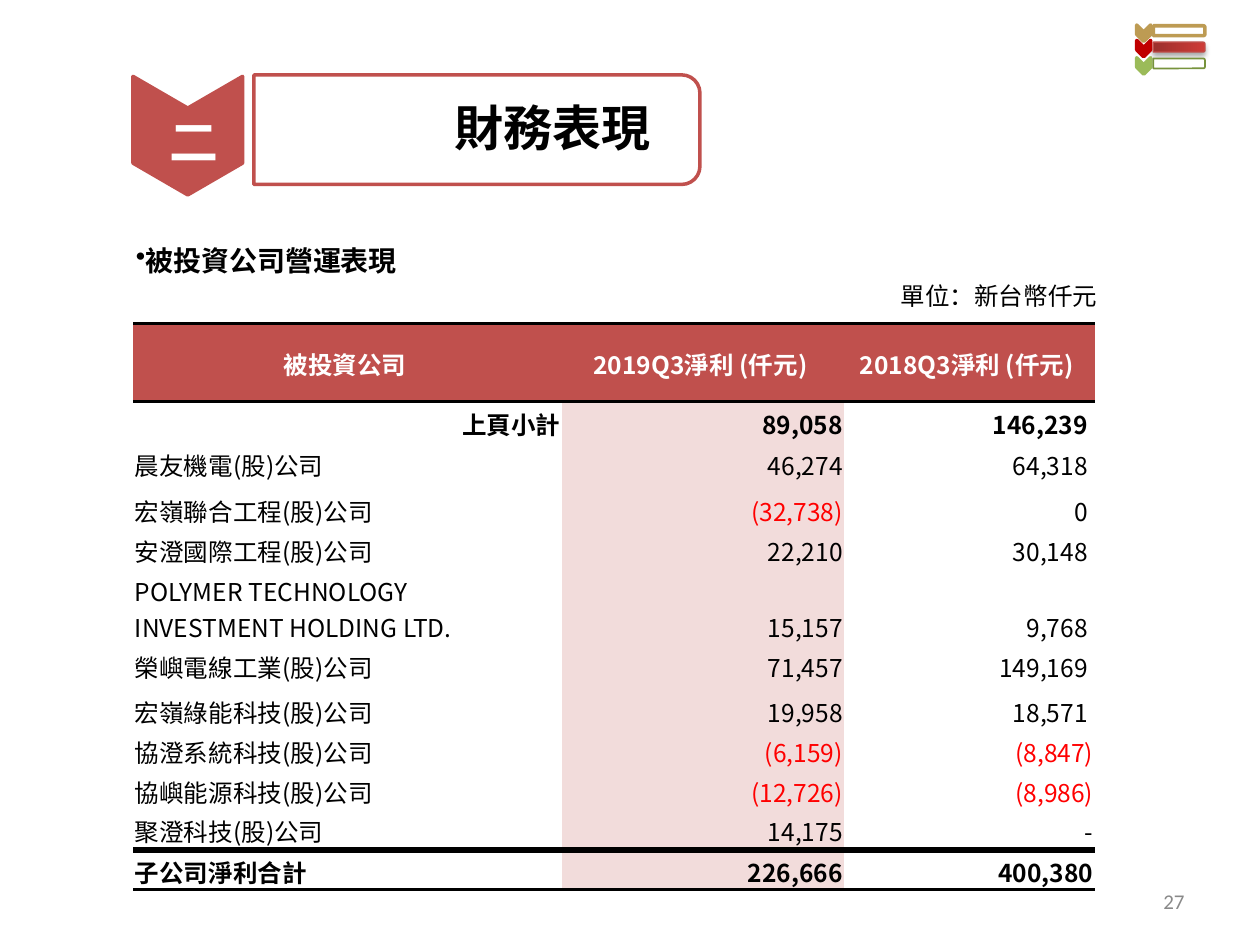
"""Build the slide on the results of the invested companies."""
from lxml import etree
from pptx import Presentation
from pptx.dml.color import RGBColor
from pptx.enum.shapes import MSO_SHAPE
from pptx.enum.text import MSO_ANCHOR, PP_ALIGN
from pptx.oxml import parse_xml
from pptx.oxml.ns import qn
from pptx.util import Cm, Pt

CHEVRON, TAB = MSO_SHAPE.CHEVRON, MSO_SHAPE.ROUND_2_SAME_RECTANGLE
TOP, MIDDLE, BOTTOM = MSO_ANCHOR.TOP, MSO_ANCHOR.MIDDLE, MSO_ANCHOR.BOTTOM
LEFT, CENTER, RIGHT = PP_ALIGN.LEFT, PP_ALIGN.CENTER, PP_ALIGN.RIGHT
CJK = "Noto Sans CJK SC"
RED, BLACK, WHITE = "C0504D", "000000", "FFFFFF"
NAMESPACE = 'xmlns:a="http://schemas.openxmlformats.org/drawingml/2006/main"'
NO_STYLE = "{2D5ABB26-0587-4C30-8999-92F81FD0307C}"


def rgb(color):
    """Turn a hex string into a colour."""
    return RGBColor.from_string(color)


def style_text(para, size, color, bold=False, align=LEFT, name=CJK):
    """Format a paragraph and its runs."""
    para.alignment = align
    for span in para.runs:
        span.font.size = Pt(size)
        span.font.bold = bold
        span.font.name = name
        span.font.color.rgb = rgb(color)
        east_asian = etree.SubElement(span.font._element, qn("a:ea"))
        east_asian.set("typeface", name)


deck = Presentation()
deck.slide_width, deck.slide_height = Cm(25.4), Cm(19.05)
page = deck.slides.add_slide(deck.slide_layouts[6])

shapes = [
    (TAB, 8.51, -1.88, 2.21, 8.99, WHITE, RED, 2),
    (CHEVRON, 2.59, 1.63, 2.39, 2.21, RED, RED, 2),
    (TAB, 23.67, 0.43, 0.2, 1.04, "gradient", "BF4C48", 0.75),
    (CHEVRON, 22.89, 0.53, 0.33, 0.28, "BD9B53", "BD9B53", 2),
    (TAB, 23.67, 0.1, 0.2, 1.04, None, "BD9B53", 2),
    (CHEVRON, 22.89, 1.19, 0.33, 0.28, "9BBB59", "9BBB59", 2),
    (CHEVRON, 22.89, 0.84, 0.33, 0.28, "C00000", "C00000", 2),
    (TAB, 23.67, 0.76, 0.2, 1.04, WHITE, "77933C", 1),
]
for kind, left, top, width, height, fill, line, weight in shapes:
    shape = page.shapes.add_shape(kind, Cm(left), Cm(top), Cm(width), Cm(height))
    shape.rotation = 90
    shape.shadow.inherit = False
    shape.line.color.rgb = rgb(line)
    shape.line.width = Pt(weight)
    if kind == CHEVRON and width > 1:
        shape.adjustments[0] = 0.29
    if fill is None:
        shape.fill.background()
    elif fill == "gradient":
        shape.fill.gradient()
        shape.fill.gradient_angle = 90
        for stop, color in zip(shape.fill.gradient_stops, ("9C2F2D", "CE3B37")):
            stop.color.rgb = rgb(color)
        effects = shape._element.spPr.find(qn("a:effectLst"))
        effects.append(parse_xml(
            f'<a:outerShdw {NAMESPACE} blurRad="{Pt(3.1)}" dist="{Pt(1.8)}" dir="5400000" '
            'rotWithShape="0"><a:srgbClr val="000000"><a:alpha val="35000"/></a:srgbClr>'
            '</a:outerShdw>'))
    else:
        shape.fill.solid()
        shape.fill.fore_color.rgb = rgb(fill)
        if fill == WHITE:
            color = shape._element.spPr.find(qn("a:solidFill"))[0]
            etree.SubElement(color, qn("a:alpha")).set("val", "90000")

texts = [
    ("被投資公司營運表現", 2.49, 4.11, 21.59, 2.21, 16, BLACK, True, LEFT, CJK, TOP, 2, None),
    ("單位：新台幣仟元", 17.91, 5.54, 5, 0.79, 14, BLACK, False, LEFT, CJK, TOP, 1, None),
    ("財務表現", 5.26, 1.52, 11.84, 2.21, 28, BLACK, True, LEFT, CJK, MIDDLE, 0.9, 3.9),
    ("二", 2.11, 2.34, 3.61, 1.14, 28, WHITE, True, CENTER, CJK, MIDDLE, 0.9, 0.05),
    ("27", 18.21, 17.65, 5.92, 1.02, 12, "898989", False, RIGHT, "Calibri", MIDDLE, 1, None),
]
for text, left, top, width, height, size, color, bold, align, name, anchor, spacing, inset in texts:
    box = page.shapes.add_textbox(Cm(left), Cm(top), Cm(width), Cm(height))
    frame = box.text_frame
    frame.word_wrap = True
    frame.vertical_anchor = anchor
    if inset:
        frame.margin_left = Cm(inset)
        frame.margin_top = frame.margin_right = frame.margin_bottom = Cm(0.05)
    frame.text = text
    para = frame.paragraphs[0]
    para.line_spacing = spacing
    if spacing == 2:
        properties = para._p.get_or_add_pPr()
        etree.SubElement(properties, qn("a:buChar")).set("char", "•")
    style_text(para, size, color, bold, align, name)

rows = [
    ("被投資公司 ", "2019Q3淨利 (仟元) ", "2018Q3淨利 (仟元) "),
    ("上頁小計", "89,058", "146,239 "),
    ("晨友機電(股)公司", "46,274", "64,318 "),
    ("宏嶺聯合工程(股)公司", "(32,738)", "0 "),
    ("安澄國際工程(股)公司", "22,210", "30,148 "),
    ("POLYMER TECHNOLOGY INVESTMENT HOLDING LTD.", "15,157", "9,768 "),
    ("榮嶼電線工業(股)公司", "71,457", "149,169 "),
    ("宏嶺綠能科技(股)公司", "19,958", "18,571 "),
    ("協澄系統科技(股)公司", "(6,159)", "(8,847)"),
    ("協嶼能源科技(股)公司", "(12,726)", "(8,986)"),
    ("聚澄科技(股)公司", "14,175", "-"),
    ("子公司淨利合計", "226,666", "400,380"),
]
column_widths = [8.64, 5.69, 5.05]
row_heights = [1.57, 0.81, 0.81, 0.94, 0.81, 1.52, 0.81, 0.91, 0.81, 0.81, 0.81, 0.79]
last = len(rows) - 1
borders = {0: (("lnT", 2), ("lnB", 2)), last: (("lnT", 4), ("lnB", 2))}

table = page.shapes.add_table(len(rows), 3, Cm(2.69), Cm(6.53),
                              Cm(sum(column_widths)), Cm(sum(row_heights))).table
table.first_row = table.horz_banding = False
table._tbl.tblPr.find(qn("a:tableStyleId")).text = NO_STYLE
for column, width in zip(table.columns, column_widths):
    column.width = Cm(width)
for row, height in zip(table.rows, row_heights):
    row.height = Cm(height)

for row_index, values in enumerate(rows):
    for column_index, value in enumerate(values):
        cell = table.cell(row_index, column_index)
        cell.margin_left = cell.margin_top = cell.margin_right = Cm(0.03)
        cell.margin_bottom = 0
        cell.vertical_anchor = MIDDLE if row_index in (0, last - 1) else BOTTOM
        for side, weight in borders.get(row_index, ()):
            cell._tc.get_or_add_tcPr().append(parse_xml(
                f'<a:{side} {NAMESPACE} w="{Pt(weight)}"><a:solidFill>'
                f'<a:srgbClr val="{BLACK}"/></a:solidFill></a:{side}>'))
        if row_index == 0 or column_index == 1:
            cell.fill.solid()
            cell.fill.fore_color.rgb = rgb(RED if row_index == 0 else "F2DCDB")
        else:
            cell.fill.background()
        if row_index == 0:
            color, align = WHITE, CENTER
        else:
            color = "FF0000" if value.startswith("(") else BLACK
            align = RIGHT if column_index or row_index == 1 else LEFT
        cell.text_frame.text = value
        style_text(cell.text_frame.paragraphs[0], 14, color, row_index in (0, 1, last), align)

deck.save("out.pptx")
